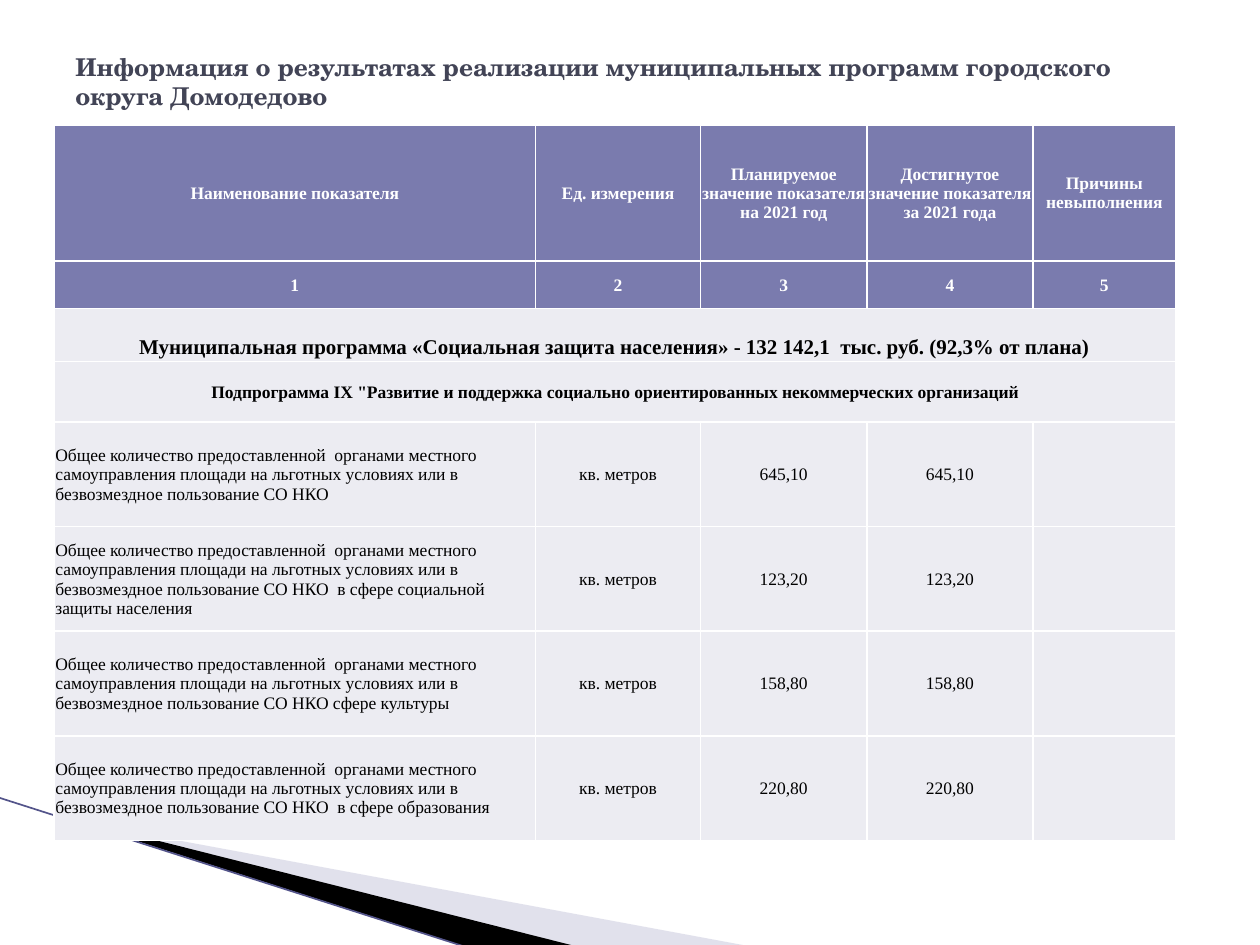
"""Build the slide on municipal programme results with its indicator table."""
from dataclasses import dataclass

from lxml import etree
from pptx import Presentation
from pptx.dml.color import RGBColor
from pptx.enum import shapes, text
from pptx.oxml import ns
from pptx.util import Inches, Pt

COLORS = {
    "title": "424456", "header": "7A7BAE", "body": "ECECF2", "white": "FFFFFF",
    "black": "000000", "lilac": "B6B6D1", "stripe": "53548A",
}
SERIF = "Times New Roman"
LEFT, CENTER = text.PP_ALIGN.LEFT, text.PP_ALIGN.CENTER
MIDDLE, BOTTOM = text.MSO_ANCHOR.MIDDLE, text.MSO_ANCHOR.BOTTOM
COLUMNS = [3.82, 1.31, 1.32, 1.32, 1.13]
ROWS = [1.08, 0.38, 0.42, 0.48] + [0.83] * 4
HEADERS = [
    "Наименование показателя",
    "Ед. измерения",
    "Планируемое значение показателя на 2021 год",
    "Достигнутое значение показателя за 2021 года",
    "Причины невыполнения",
]
PROGRAM = "Муниципальная программа «Социальная защита населения» - 132 142,1  тыс. руб. (92,3% от плана)"
SUBPROGRAM = 'Подпрограмма IX "Развитие и поддержка социально ориентированных некоммерческих организаций'
INDICATOR = (
    "Общее количество предоставленной  органами местного самоуправления площади "
    "на льготных условиях или в безвозмездное пользование СО НКО"
)


@dataclass
class Wedge:
    points: list
    color: str
    opacity: int = 100


@dataclass
class CellStyle:
    fill: str
    color: str
    bold: bool = True
    size: int = 10
    align: int = CENTER
    anchor: int = MIDDLE
    bottom: float = 0


@dataclass
class Indicator:
    scope: str
    value: str


WEDGES = [
    Wedge([(0.55, 6.51), (5.95, 7.51), (4.56, 7.51), (0.55, 6.5)], "lilac", 40),
    Wedge([(0.53, 6.49), (4.57, 7.51), (3.72, 7.52), (0.54, 6.5)], "black"),
]
INDICATORS = [
    Indicator("", "645,10"),
    Indicator("  в сфере социальной защиты населения", "123,20"),
    Indicator(" сфере культуры", "158,80"),
    Indicator("  в сфере образования", "220,80"),
]
HEADER = CellStyle("header", "white")
PROGRAM_STYLE = CellStyle("body", "black", size=12, anchor=BOTTOM, bottom=0.02)
SUBPROGRAM_STYLE = CellStyle("body", "black")
NAME = CellStyle("body", "black", bold=False, align=LEFT)
VALUE = CellStyle("body", "black", bold=False)


def rgb(name: str) -> RGBColor:
    return RGBColor.from_string(COLORS[name])


def add_wedge(s, wedge: Wedge) -> None:
    points = [(Inches(x), Inches(y)) for x, y in wedge.points]
    builder = s.shapes.build_freeform(*points[0])
    builder.add_line_segments(points[1:], close=True)
    sp = builder.convert_to_shape()
    sp.shadow.inherit = False
    sp.line.fill.background()
    sp.fill.solid()
    sp.fill.fore_color.rgb = rgb(wedge.color)
    if wedge.opacity < 100:
        color = sp._element.spPr.find(".//" + ns.qn("a:srgbClr"))
        etree.SubElement(color, ns.qn("a:alpha"), val=str(wedge.opacity * 1000))


def add_stripe(s) -> None:
    line = s.shapes.add_connector(
        shapes.MSO_CONNECTOR.STRAIGHT, Inches(-0.01), Inches(6.33), Inches(3.71), Inches(7.52)
    )
    line.line.color.rgb = rgb("stripe")
    line.line.width = Pt(0.95)
    etree.SubElement(line._element.spPr, ns.qn("a:effectLst"))


def add_title(s, title: str) -> None:
    tf = s.shapes.add_textbox(Inches(0.5), Inches(0.3), Inches(9), Inches(0.69)).text_frame
    tf.word_wrap = True
    tf.vertical_anchor = MIDDLE
    p = tf.paragraphs[0]
    p.text = title
    p.font.name = "TeX Gyre Schola"
    p.font.size = Pt(14)
    p.font.bold = True
    p.font.color.rgb = rgb("title")


def add_borders(cell) -> None:
    tc_pr = cell._tc.get_or_add_tcPr()
    for side in ("lnL", "lnR", "lnT", "lnB"):
        ln = etree.SubElement(tc_pr, ns.qn(f"a:{side}"), w=str(Pt(1)))
        fill = etree.SubElement(ln, ns.qn("a:solidFill"))
        etree.SubElement(fill, ns.qn("a:srgbClr"), val=COLORS["white"])


def fill_cell(cell, content: str, style: CellStyle) -> None:
    add_borders(cell)
    cell.fill.solid()
    cell.fill.fore_color.rgb = rgb(style.fill)
    cell.margin_left = cell.margin_right = cell.margin_top = Inches(0.01)
    cell.margin_bottom = Inches(style.bottom)
    cell.vertical_anchor = style.anchor
    p = cell.text_frame.paragraphs[0]
    p.text = content
    p.alignment = style.align
    p.font.name = SERIF
    p.font.size = Pt(style.size)
    p.font.bold = style.bold
    p.font.color.rgb = rgb(style.color)


def add_results_table(s) -> None:
    count = len(COLUMNS)
    rows = [
        (HEADERS, [HEADER] * count),
        ([str(n + 1) for n in range(count)], [HEADER] * count),
        ([PROGRAM] + [""] * (count - 1), [PROGRAM_STYLE] * count),
        ([SUBPROGRAM] + [""] * (count - 1), [SUBPROGRAM_STYLE] * count),
    ]
    for item in INDICATORS:
        contents = [INDICATOR + item.scope, "кв. метров", item.value, item.value, ""]
        rows.append((contents, [NAME] + [VALUE] * (count - 1)))
    table = s.shapes.add_table(
        len(ROWS), count, Inches(0.43), Inches(0.99), Inches(sum(COLUMNS)), Inches(sum(ROWS))
    ).table
    for column, width in zip(table.columns, COLUMNS):
        column.width = Inches(width)
    for row, height, (contents, styles) in zip(table.rows, ROWS, rows):
        row.height = Inches(height)
        for cell, content, style in zip(row.cells, contents, styles):
            fill_cell(cell, content, style)
    for index in (2, 3):
        table.cell(index, 0).merge(table.cell(index, count - 1))


def main() -> None:
    prs = Presentation()
    prs.slide_width, prs.slide_height = Inches(10), Inches(7.5)
    s = prs.slides.add_slide(prs.slide_layouts[6])
    for wedge in WEDGES:
        add_wedge(s, wedge)
    add_stripe(s)
    add_title(s, "Информация о результатах реализации муниципальных программ городского округа Домодедово")
    add_results_table(s)
    prs.save("out.pptx")


if __name__ == "__main__":
    main()
